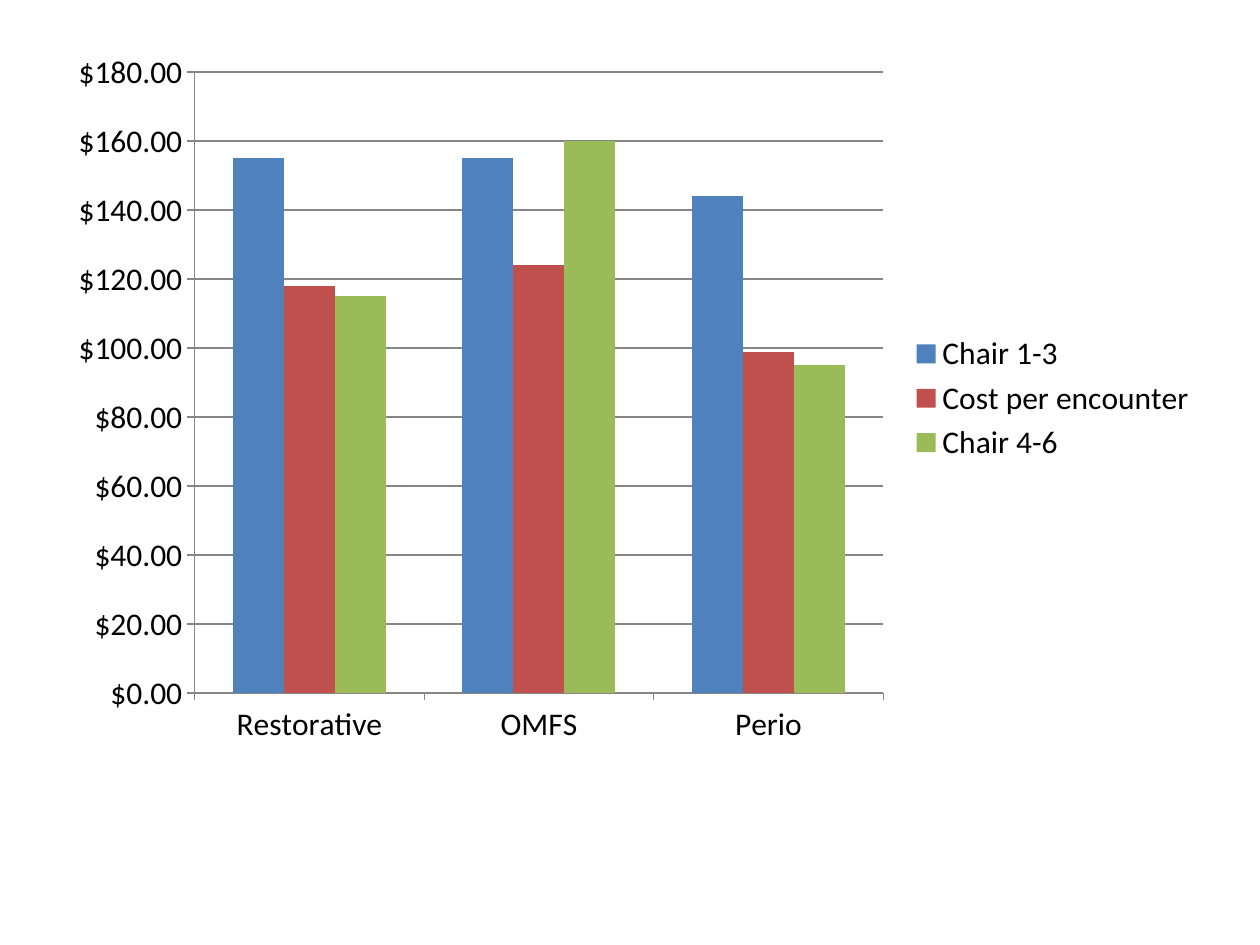
"""Builds a slide with a clustered column chart of dental cost per encounter."""

from dataclasses import dataclass

from pptx import Presentation
from pptx.chart.axis import _BaseAxis as Axis
from pptx.chart.chart import Chart
from pptx.chart.data import CategoryChartData
from pptx.dml.color import RGBColor
from pptx.enum.chart import XL_CHART_TYPE as ChartType
from pptx.enum.chart import XL_LEGEND_POSITION as LegendPosition
from pptx.enum.chart import XL_TICK_MARK as TickMark
from pptx.slide import Slide
from pptx.util import Inches, Pt


@dataclass(frozen=True)
class Theme:
    font: str = "Calibri"
    text_size: float = 18
    line_width: float = 0.75
    background: str = "FFFFFF"
    text: str = "000000"
    line: str = "868686"
    blue: str = "4F81BD"
    red: str = "C0504D"
    green: str = "9BBB59"


@dataclass(frozen=True)
class Area:
    left: float
    top: float
    width: float
    height: float


@dataclass(frozen=True)
class CostSeries:
    name: str
    values: tuple[float, ...]
    color: str


THEME = Theme()
SLIDE_WIDTH, SLIDE_HEIGHT = Inches(10), Inches(7.5)
CHART_AREA = Area(left=0.044, top=0.041, width=0.916, height=0.761)
DEPARTMENTS = ("Restorative", "OMFS", "Perio")
COSTS = (
    CostSeries("Chair 1-3", (155, 155, 144), THEME.blue),
    CostSeries("Cost per encounter", (118, 124, 99), THEME.red),
    CostSeries("Chair 4-6", (115, 160, 95), THEME.green),
)
CURRENCY = '"$"#,##0.00'


def add_cost_chart(slide: Slide, area: Area) -> Chart:
    data = CategoryChartData(number_format=CURRENCY)
    data.categories = DEPARTMENTS
    for cost in COSTS:
        data.add_series(cost.name, cost.values)
    frame = slide.shapes.add_chart(
        ChartType.COLUMN_CLUSTERED,
        int(area.left * SLIDE_WIDTH),
        int(area.top * SLIDE_HEIGHT),
        int(area.width * SLIDE_WIDTH),
        int(area.height * SLIDE_HEIGHT),
        data,
    )
    return frame.chart


def style_line(line_format) -> None:
    line_format.color.rgb = RGBColor.from_string(THEME.line)
    line_format.width = Pt(THEME.line_width)


def style_axis(axis: Axis) -> None:
    axis.major_tick_mark = TickMark.OUTSIDE
    axis.minor_tick_mark = TickMark.NONE
    style_line(axis.format.line)


def style_chart(chart: Chart) -> None:
    chart.has_title = False
    chart.font.name = THEME.font
    chart.font.size = Pt(THEME.text_size)
    chart.font.color.rgb = RGBColor.from_string(THEME.text)
    chart.has_legend = True
    chart.legend.position = LegendPosition.RIGHT
    chart.legend.include_in_layout = False

    plot = chart.plots[0]
    plot.gap_width = 150
    plot.overlap = 0
    plot.vary_by_categories = False
    for series, cost in zip(plot.series, COSTS):
        series.invert_if_negative = False
        series.format.fill.solid()
        series.format.fill.fore_color.rgb = RGBColor.from_string(cost.color)

    value_axis = chart.value_axis
    for axis in (chart.category_axis, value_axis):
        style_axis(axis)
    value_axis.minimum_scale = 0
    value_axis.maximum_scale = 180
    value_axis.major_unit = 20
    value_axis.has_major_gridlines = True
    style_line(value_axis.major_gridlines.format.line)
    value_axis.tick_labels.number_format = CURRENCY
    value_axis.tick_labels.number_format_is_linked = False


def main() -> None:
    presentation = Presentation()
    presentation.slide_width = SLIDE_WIDTH
    presentation.slide_height = SLIDE_HEIGHT
    slide = presentation.slides.add_slide(presentation.slide_layouts[6])
    slide.background.fill.solid()
    slide.background.fill.fore_color.rgb = RGBColor.from_string(THEME.background)
    style_chart(add_cost_chart(slide, CHART_AREA))
    presentation.save("out.pptx")


if __name__ == "__main__":
    main()
